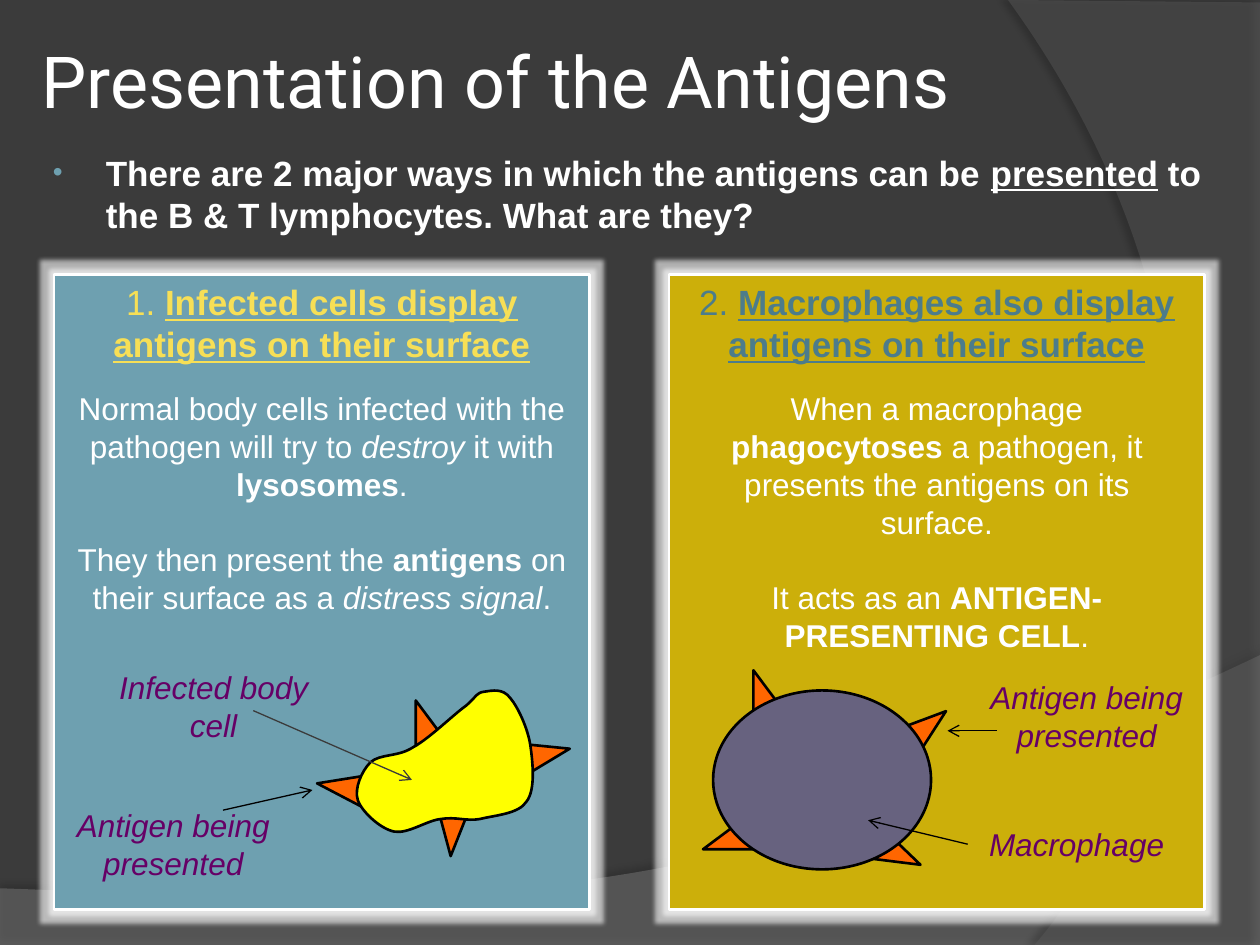
from lxml import etree
from pptx import Presentation
from pptx.dml.color import RGBColor
from pptx.enum.shapes import MSO_CONNECTOR, MSO_SHAPE
from pptx.enum.text import MSO_ANCHOR, MSO_AUTO_SIZE, PP_ALIGN
from pptx.oxml.ns import qn
from pptx.util import Inches, Pt

RECTANGLE = MSO_SHAPE.RECTANGLE
TRIANGLE = MSO_SHAPE.RIGHT_TRIANGLE
OVAL = MSO_SHAPE.OVAL
STRAIGHT = MSO_CONNECTOR.STRAIGHT
LEFT, CENTER = PP_ALIGN.LEFT, PP_ALIGN.CENTER
TOP, MIDDLE = MSO_ANCHOR.TOP, MSO_ANCHOR.MIDDLE
GROW = MSO_AUTO_SIZE.SHAPE_TO_FIT_TEXT

WHITE, BLACK, CHARCOAL = "FFFFFF", "000000", "3B3B3B"
TEAL, GOLD, ORANGE, PURPLE = "6EA0B0", "CCAF0A", "FF6600", "660066"
LEFT_SIDE = 1

INFECTED_OUTLINE = [
    (3.6, 5.67, 3.41, 5.86, 3.28, 5.93), (3.16, 6.01, 3.02, 5.98, 2.94, 6.05),
    (2.87, 6.12, 2.81, 6.26, 2.84, 6.35), (2.87, 6.44, 3.02, 6.58, 3.13, 6.6),
    (3.24, 6.62, 3.39, 6.51, 3.5, 6.5), (3.62, 6.48, 3.7, 6.52, 3.81, 6.5),
    (3.93, 6.47, 4.12, 6.46, 4.18, 6.36), (4.25, 6.27, 4.23, 6.06, 4.21, 5.92),
    (4.19, 5.78, 4.11, 5.61, 4.05, 5.54), (3.99, 5.46, 3.91, 5.48, 3.84, 5.49),
    (3.78, 5.5, 3.79, 5.52, 3.7, 5.6),
]


def rgb(color):
    return RGBColor.from_string(color)


def child(parent, tag, **attributes):
    node = etree.SubElement(parent, qn(tag))
    for name, value in attributes.items():
        node.set(name, str(value))
    return node


def add_effect(shape, tag, color, opacity, **attributes):
    shape.shadow.inherit = False
    effects = shape._element.spPr.find(qn("a:effectLst"))
    tint = child(child(effects, tag, **attributes), "a:srgbClr", val=color)
    child(tint, "a:alpha", val=opacity * 1000)


def paint(shape, fill, outline=BLACK):
    shape.shadow.inherit = False
    shape.fill.solid()
    shape.fill.fore_color.rgb = rgb(fill)
    if outline:
        shape.line.color.rgb = rgb(outline)
        shape.line.width = Pt(1.5)
    else:
        shape.line.fill.background()
    return shape


def write(frame, paragraphs, size=18, color=WHITE, font="Arial", align=CENTER,
          gap=0, anchor=TOP):
    frame.word_wrap = True
    frame.vertical_anchor = anchor
    for index, runs in enumerate(paragraphs):
        paragraph = frame.add_paragraph() if index else frame.paragraphs[0]
        paragraph.alignment = align
        paragraph.space_before = Pt(gap if index else 0)
        for text, style in runs:
            run = paragraph.add_run()
            run.text = text
            run.font.name = font
            run.font.size = Pt(size)
            run.font.color.rgb = rgb(color)
            run.font.bold = "b" in style
            run.font.italic = "i" in style
            run.font.underline = "u" in style


def place(shape, *box):
    shape.left, shape.top, shape.width, shape.height = map(Inches, box)


def add_text(shapes, box, paragraphs, **text_format):
    textbox = shapes.add_textbox(*map(Inches, box))
    write(textbox.text_frame, paragraphs, **text_format)
    textbox.text_frame.auto_size = GROW
    return textbox


def add_label(shapes, box, text):
    return add_text(shapes, box, [[(text, "i")]], color=PURPLE)


def add_curved(shapes, start, segments, fill, outline=BLACK):
    builder = shapes.build_freeform(Inches(start[0]), Inches(start[1]))
    builder.add_line_segments([tuple(map(Inches, s[-2:])) for s in segments])
    outlined = builder.convert_to_shape()
    sides = list(outlined._element.spPr.iter(qn("a:lnTo")))
    for side, segment in zip(sides, segments):
        if len(segment) == 6:
            side.tag = qn("a:cubicBezTo")
            side.remove(side[0])
            for x, y in zip(segment[::2], segment[1::2]):
                child(side, "a:pt", x=Inches(x) - outlined.left,
                      y=Inches(y) - outlined.top)
    return paint(outlined, fill, outline)


def add_swoosh(shapes, start, segments, fill, opacity, shade, distance, angle):
    swoosh = add_curved(shapes, start, segments, fill, None)
    tint = swoosh._element.spPr.find(qn("a:solidFill"))[0]
    child(tint, "a:alpha", val=opacity * 1000)
    add_effect(swoosh, "a:outerShdw", BLACK, shade, blurRad=Pt(4),
               dist=Pt(distance), dir=angle * 60000)


def add_arrow(shapes, start, end, color=BLACK, source=None):
    arrow = shapes.add_connector(STRAIGHT, *map(Inches, start + end))
    arrow.line.color.rgb = rgb(color)
    arrow.line.width = Pt(0.75)
    child(arrow.line._get_or_add_ln(), "a:tailEnd", type="arrow")
    child(arrow._element.spPr, "a:effectLst")
    if source is not None:
        arrow.begin_connect(source, LEFT_SIDE)


def add_antigens(shapes, antigens):
    for left, top, angle in antigens:
        box = map(Inches, (left, top, 0.47, 0.63))
        antigen = paint(shapes.add_shape(TRIANGLE, *box), ORANGE)
        antigen.rotation = angle


def add_panel(slide, left, fill, number, heading, heading_color, body, body_height):
    shapes = slide.shapes.add_group_shape().shapes
    box = map(Inches, (left, 2.18, 4.25, 5.04))
    card = paint(shapes.add_shape(RECTANGLE, *box), fill, WHITE)
    add_effect(card, "a:glow", WHITE, 60, rad=Inches(0.07))
    add_text(shapes, (left + 0.08, 2.18, 4.09, 0.77),
             [[(number, ""), (heading, "bu")]], size=20, color=heading_color)
    add_text(shapes, (left + 0.08, 3.04, 4.09, body_height), body, gap=21.5)
    return shapes


def add_infected_panel(slide):
    shapes = add_panel(
        slide, 0.43, TEAL, "1. ",
        "Infected cells display antigens on their surface", "F7DF56",
        [[("Normal body cells infected with the pathogen will try to ", ""),
          ("destroy", "i"), (" it with ", ""), ("lysosomes", "b"), (".", "")],
         [("They then present the ", ""), ("antigens ", "b"),
          ("on their surface as a ", ""), ("distress signal", "i"), (".", "")]],
        1.92)
    add_antigens(shapes, [(3.3, 5.56, 0), (2.67, 5.84, 297.6),
                          (3.95, 5.83, 95.7), (3.24, 6.1, 201.7)])
    add_curved(shapes, (3.7, 5.6), INFECTED_OUTLINE, "FFFF00")
    add_label(shapes, (0.75, 5.25, 1.89, 0.71), "Infected body cell")
    add_label(shapes, (0.43, 6.35, 1.89, 0.71), "Antigen being presented")
    add_arrow(shapes, (2.01, 5.64), (3.27, 6.19), CHARCOAL)
    add_arrow(shapes, (1.77, 6.43), (2.48, 6.27))


def add_macrophage_panel(slide):
    shapes = add_panel(
        slide, 5.31, GOLD, "2. ",
        "Macrophages also display antigens on their surface", "4C7C8B",
        [[("When a macrophage ", ""), ("phagocytoses ", "b"),
          ("a pathogen, it presents the antigens on its surface.", "")],
         [("It acts as an ", ""), ("ANTIGEN-PRESENTING CELL", "b"), (".", "")]],
        2.22)
    add_antigens(shapes, [(5.98, 5.32, 0), (7.06, 5.66, 69.5),
                          (5.66, 6.19, 270), (6.68, 6.5, 133.8)])
    paint(shapes.add_shape(OVAL, *map(Inches, (5.66, 5.48, 1.73, 1.42))), "67627F")
    add_label(shapes, (7.76, 5.33, 1.73, 0.71), "Antigen being presented")
    macrophage = add_label(shapes, (7.68, 6.5, 1.73, 0.4), "Macrophage")
    add_arrow(shapes, (7.68, 6.7), (6.89, 6.51), source=macrophage)
    add_arrow(shapes, (7.91, 5.8), (7.52, 5.8))


def add_question(body):
    place(body, 0.28, 1.15, 9.45, 6.14)
    write(body.text_frame,
          [[("There are 2 major ways in which the antigens can be ", "b"),
            ("presented", "bu"),
            (" to the B & T lymphocytes. What are they?", "b")]],
          size=20, align=LEFT)
    paragraph = body.text_frame.paragraphs[0]
    paragraph.space_before = Pt(4)
    properties = paragraph._p.get_or_add_pPr()
    properties.set("marL", str(Inches(0.46)))
    properties.set("indent", str(Inches(-0.42)))
    child(child(properties, "a:buClr"), "a:srgbClr", val=TEAL)
    child(properties, "a:buSzPct", val=80000)
    child(properties, "a:buFont", typeface="Arial")
    child(properties, "a:buChar", char="•")


def main():
    deck = Presentation()
    deck.slide_width, deck.slide_height = Inches(10), Inches(7.5)
    slide = deck.slides.add_slide(deck.slide_layouts[1])
    slide.background.fill.solid()
    slide.background.fill.fore_color.rgb = rgb(CHARCOAL)
    title, body = slide.placeholders
    add_swoosh(slide.shapes, (0, 7.05),
               [(0, 7.5), (10, 7.5), (10, 5.2), (5.59, 7.29, 3.91, 7.19, 0, 7.05)],
               "7F7F7F", 45, 35, 3.5, 270)
    add_swoosh(slide.shapes, (10, 0.02),
               [(10, 7.5), (8.21, 7.5), (9.35, 6.19, 10.18, 3, 8, 0), (10, 0.02)],
               "5E5E5E", 40, 45, 4, 180)
    for placeholder in (title, body):
        slide.shapes._spTree.append(placeholder._element)
    place(title, 0.28, 0.21, 9.45, 0.85)
    title.text_frame.margin_left = title.text_frame.margin_right = Inches(0.05)
    write(title.text_frame, [[("Presentation of the Antigens", "")]], size=41,
          font="Roboto", align=LEFT, anchor=MIDDLE)
    add_question(body)
    add_infected_panel(slide)
    add_macrophage_panel(slide)
    deck.save("out.pptx")


if __name__ == "__main__":
    main()
